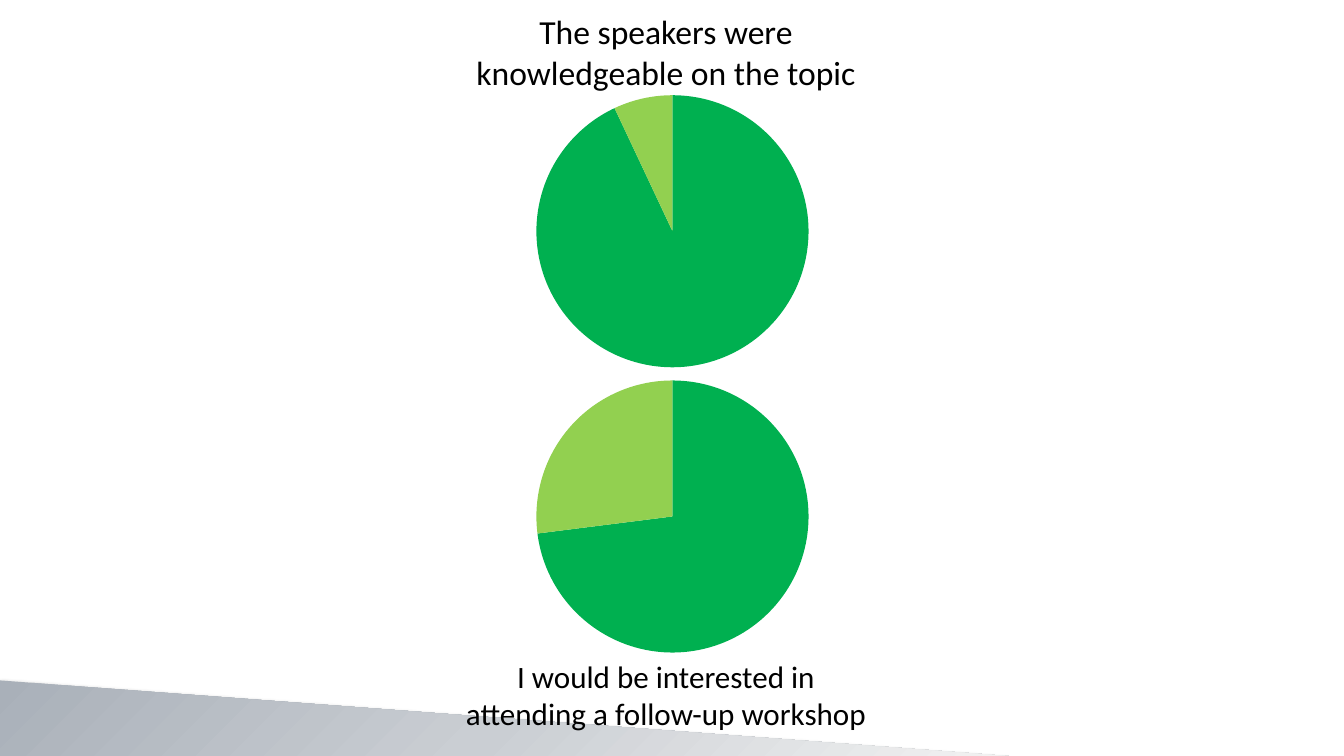
"""Build the survey feedback slide with two pie charts."""
import pptx
import pptx.chart.data
import pptx.dml.color
import pptx.enum.chart
import pptx.enum.shapes
import pptx.enum.text
import pptx.oxml
import pptx.util

Inches = pptx.util.Inches
THEME = {
    "text": "000000", "label": "001C3D", "face": "Calibri", "chart": "Cambria",
    "head": 24, "foot": 22.2, "small": 10,
    "slices": ["00B050", "92D050", "001C3D", "F3A687", "7FD0ED"],
    "fade": [(0, "A9B0B9"), (50, "CACED3"), (100, "F2F2F2")],
}
NS = 'xmlns:a="http://schemas.openxmlformats.org/drawingml/2006/main"'
CNS = 'xmlns:c="http://schemas.openxmlformats.org/drawingml/2006/chart"'


def rgb(code):
    """Return a colour from its hex code."""
    return pptx.dml.color.RGBColor.from_string(code)


def apply(obj, vals):
    """Set each attribute of obj from a dict."""
    for key, val in vals.items():
        setattr(obj, key, val)


def place(shape, *box):
    """Move and size a shape, in inches."""
    apply(shape, dict(zip(("left", "top", "width", "height"), map(Inches, box))))


def write(shape, text, size):
    """Fill a shape with one centred paragraph."""
    frame = shape.text_frame
    apply(frame, {
        "text": text, "word_wrap": True,
        "auto_size": pptx.enum.text.MSO_AUTO_SIZE.NONE,
        "vertical_anchor": pptx.enum.text.MSO_ANCHOR.TOP,
    })
    para = frame.paragraphs[0]
    para.alignment = pptx.enum.text.PP_ALIGN.CENTER
    font = para.runs[0].font
    apply(font, {"name": THEME["face"], "size": pptx.util.Pt(size)})
    font.color.rgb = rgb(THEME["text"])


def add_wedge(slide):
    """Draw the shaded triangle along the foot of the slide."""
    kind = pptx.enum.shapes.MSO_SHAPE.RIGHT_TRIANGLE
    wedge = slide.shapes.add_shape(
        kind, Inches(0), Inches(6.75), Inches(10), Inches(0.75))
    stops = "".join(
        f'<a:gs pos="{pos * 1000}"><a:srgbClr val="{code}"/></a:gs>'
        for pos, code in THEME["fade"])
    fill = (f'<a:gradFill {NS}><a:gsLst>{stops}</a:gsLst>'
            '<a:lin ang="2700000" scaled="0"/></a:gradFill>')
    glow = (f'<a:effectLst {NS}><a:outerShdw blurRad="50800" dist="25400" '
            'dir="5400000" rotWithShape="0"><a:srgbClr val="000000">'
            '<a:alpha val="46000"/></a:srgbClr></a:outerShdw></a:effectLst>')
    props = wedge.element.spPr
    props.append(pptx.oxml.parse_xml(fill))
    wedge.line.fill.background()
    props.append(pptx.oxml.parse_xml(glow))


def add_pie(slide, top, vals):
    """Add a pie chart of the five answer grades."""
    data = pptx.chart.data.CategoryChartData()
    data.categories = ["1", "2", "3", "4", "5"]
    data.add_series("Series 1", vals)
    chart = slide.shapes.add_chart(
        pptx.enum.chart.XL_CHART_TYPE.PIE, Inches(4.17), Inches(top),
        Inches(5), Inches(3), data).chart
    apply(chart, {"has_legend": False, "has_title": False})
    apply(chart.font, {"name": THEME["chart"], "size": pptx.util.Pt(THEME["small"])})
    chart.font.color.rgb = rgb(THEME["label"])
    plot = chart.plots[0]
    plot.vary_by_categories = True
    for num, code in enumerate(THEME["slices"]):
        form = plot.series[0].points[num].format
        form.fill.solid()
        form.fill.fore_color.rgb = rgb(code)
        form.line.fill.background()
    sizes = {"x": 0.23, "y": 0.05, "w": 0.54, "h": 0.91}
    parts = '<c:layoutTarget val="inner"/><c:xMode val="edge"/><c:yMode val="edge"/>'
    parts += "".join(f'<c:{key} val="{val}"/>' for key, val in sizes.items())
    area = chart.element.chart.plotArea
    for old in area.xpath("c:layout"):
        area.remove(old)
    area.insert(0, pptx.oxml.parse_xml(
        f"<c:layout {CNS}><c:manualLayout>{parts}</c:manualLayout></c:layout>"))


def main():
    """Build and save the slide."""
    deck = pptx.Presentation()
    apply(deck, {"slide_width": Inches(13.33), "slide_height": Inches(7.5)})
    slide = deck.slides.add_slide(deck.slide_layouts[5])
    add_wedge(slide)
    title = slide.shapes.title
    place(title, 4.5, 0.06, 4.21, 0.83)
    write(title, "The speakers were knowledgeable on the topic", THEME["head"])
    foot = slide.shapes.add_textbox(0, 0, 0, 0)
    place(foot, 4.5, 6.47, 4.21, 0.83)
    write(foot, "I would be interested in attending a follow-up workshop",
          THEME["foot"])
    for top, vals in ((0.78, (93, 7, 0, 0, 0)), (3.61, (73, 27, 0, 0, 0))):
        add_pie(slide, top, vals)
    deck.save("out.pptx")


if __name__ == "__main__":
    main()
